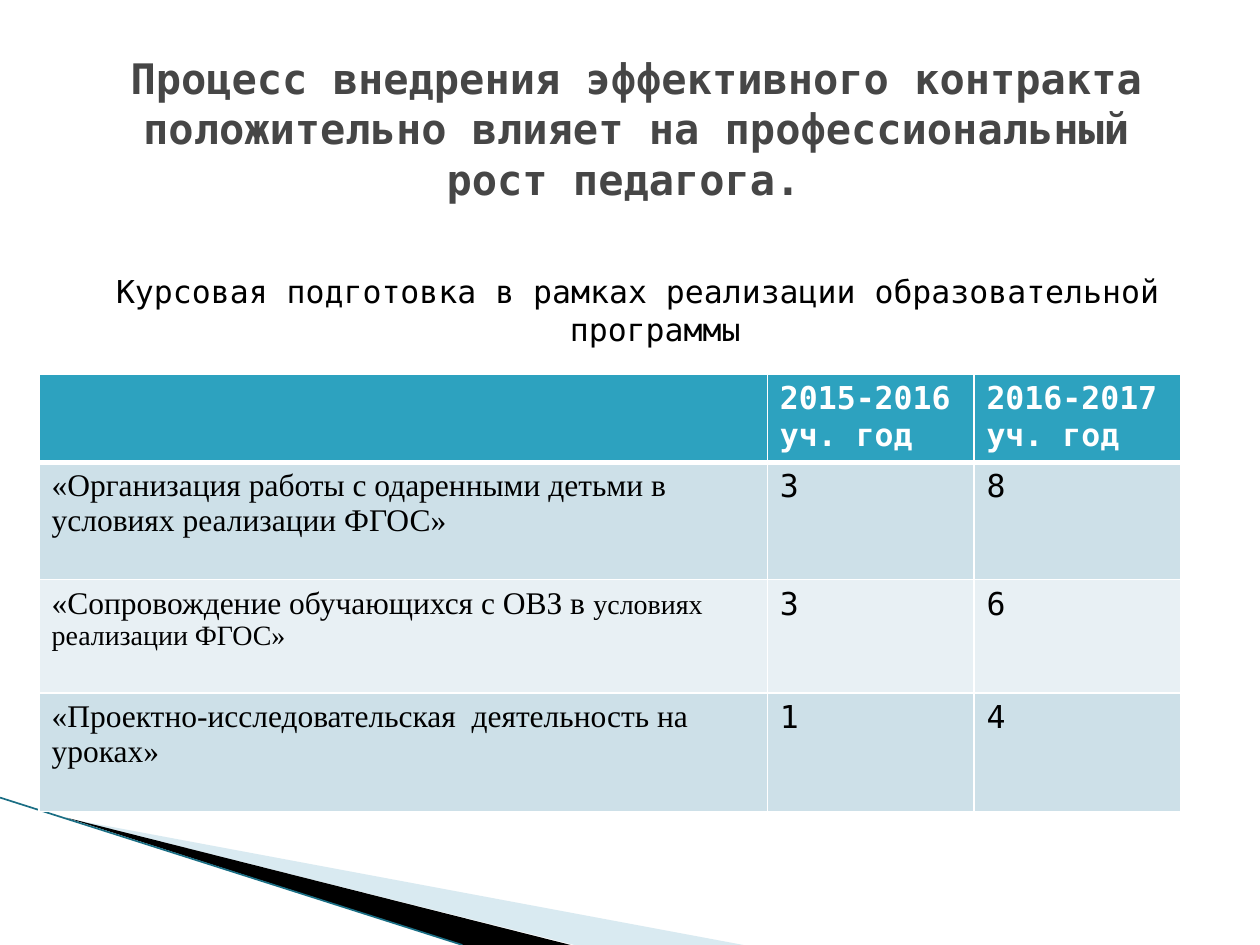
from lxml.etree import SubElement
from pptx import Presentation
from pptx.dml.color import RGBColor
from pptx.enum.shapes import MSO_CONNECTOR
from pptx.enum.text import MSO_ANCHOR, PP_ALIGN
from pptx.oxml.ns import qn
from pptx.util import Inches, Pt

MONO, SERIF = "DejaVu Sans Mono", "Times New Roman"
TITLE = ("Процесс внедрения эффективного контракта положительно влияет "
         "на профессиональный рост педагога. ")
SUBTITLE = "Курсовая подготовка в рамках реализации образовательной программы"
HEADER = ["", "2015-2016 уч. год", "2016-2017 уч. год"]
# Each course: name as (text, size) runs, then its count for each year
COURSES = [
    ([("«Организация работы с одаренными детьми в условиях реализации ФГОС»", 18)], 3, 8),
    ([("«Сопровождение обучающихся с ОВЗ в ", 18), ("условиях реализации ФГОС»", 16)], 3, 6),
    ([("«Проектно-исследовательская  деятельность на уроках»", 18)], 1, 4),
]
COL_WIDTHS = [5.78, 1.64, 1.64]
ROW_HEIGHTS = [0.67, 0.93, 0.9, 0.94]
HEADER_FILL, BANDS = "2DA2BF", ["CDE0E8", "E8F0F4"]
# Corner wedges: points, fill, opacity in percent
WEDGES = [
    ([(0.55, 6.5), (5.9, 7.5), (4.56, 7.5)], "A0CBDC", 40),
    ([(0.53, 6.49), (4.53, 7.5), (3.67, 7.5)], "000000", 100),
]


def rgb(color):
    return RGBColor.from_string(color)


def add_run(p, text, size, color, font=MONO, bold=False):
    r = p.add_run()
    r.text = text
    r.font.size, r.font.name, r.font.bold = Pt(size), font, bold
    r.font.color.rgb = rgb(color)


def add_wedge(points, color, opacity):
    builder = s.shapes.build_freeform(*map(Inches, points[0]), scale=1.0)
    builder.add_line_segments([(Inches(x), Inches(y)) for x, y in points[1:]])
    sp = builder.convert_to_shape()
    sp.shadow.inherit = False
    sp.fill.solid()
    sp.fill.fore_color.rgb = rgb(color)
    sp.line.fill.background()
    if opacity < 100:
        clr = sp.fill._xPr.find(".//" + qn("a:srgbClr"))
        SubElement(clr, qn("a:alpha"), val=str(opacity * 1000))


def add_centered_text(box, text, size, color, bold=False):
    tf = s.shapes.add_textbox(*map(Inches, box)).text_frame
    tf.word_wrap = True
    p = tf.paragraphs[0]
    p.alignment = PP_ALIGN.CENTER
    add_run(p, text, size, color, bold=bold)
    return tf


def style_cell(cell, fill, bottom=1):
    """Set white borders and a plain fill, borders first as the schema asks."""
    tc_pr = cell._tc.get_or_add_tcPr()
    for side, width in zip("LRTB", (1, 1, 1, bottom)):
        ln = SubElement(tc_pr, qn(f"a:ln{side}"), w=str(Pt(width)))
        SubElement(SubElement(ln, qn("a:solidFill")), qn("a:srgbClr"), val="FFFFFF")
    cell.fill.solid()
    cell.fill.fore_color.rgb = rgb(fill)


prs = Presentation()
prs.slide_width, prs.slide_height = Inches(10), Inches(7.5)
s = prs.slides.add_slide(prs.slide_layouts[6])

for wedge in WEDGES:
    add_wedge(*wedge)
edge = s.shapes.add_connector(MSO_CONNECTOR.STRAIGHT, 0, Inches(6.33), Inches(3.67), Inches(7.5))
edge.line.color.rgb = rgb("1A6E84")
edge.line.width = Pt(0.95)
SubElement(edge._element.spPr, qn("a:effectLst"))

subtitle = add_centered_text((0.5, 2.11, 9, 0.75), SUBTITLE, 18, "000000")
p_pr = subtitle.paragraphs[0]._p.get_or_add_pPr()
p_pr.set("marL", str(Inches(0.4)))
p_pr.set("indent", str(Inches(-0.28)))
title = add_centered_text((0.55, 0.39, 9, 1.25), TITLE, 24, "464646", bold=True)
title.vertical_anchor = MSO_ANCHOR.MIDDLE

table = s.shapes.add_table(len(ROW_HEIGHTS), len(COL_WIDTHS), Inches(0.31), Inches(2.97),
                           Inches(sum(COL_WIDTHS)), Inches(sum(ROW_HEIGHTS))).table
for column, width in zip(table.columns, COL_WIDTHS):
    column.width = Inches(width)
for row, height in zip(table.rows, ROW_HEIGHTS):
    row.height = Inches(height)

for c, text in enumerate(HEADER):
    cell = table.cell(0, c)
    style_cell(cell, HEADER_FILL, bottom=3)
    if text:
        add_run(cell.text_frame.paragraphs[0], text, 18, "FFFFFF", bold=True)
for i, (name, *counts) in enumerate(COURSES):
    cells = table.rows[i + 1].cells
    for cell in cells:
        style_cell(cell, BANDS[i % 2])
    for c, count in enumerate(counts, 1):
        add_run(cells[c].text_frame.paragraphs[0], str(count), 18, "000000")
    for text, size in name:
        add_run(cells[0].text_frame.paragraphs[0], text, size, "000000", SERIF)

prs.save("out.pptx")
